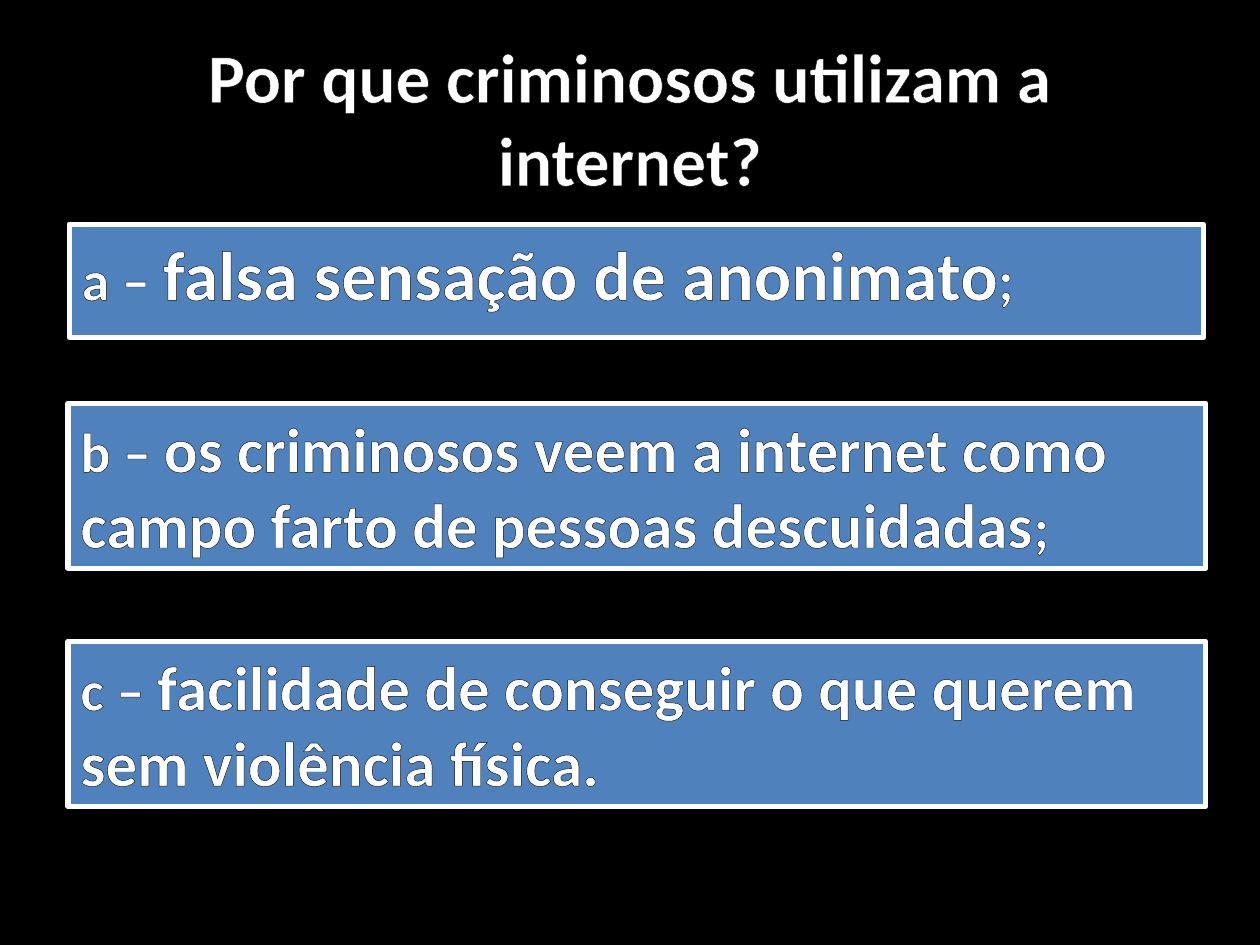
from lxml.etree import fromstring
from pptx import Presentation
from pptx.dml.color import RGBColor
from pptx.enum.shapes import MSO_SHAPE
from pptx.enum.text import MSO_ANCHOR, PP_ALIGN
from pptx.oxml.ns import nsdecls
from pptx.util import Inches, Pt

COLORS = {"back": "000000", "box": "4F81BD", "text": "FFFFFF", "edge": "0D0D0D"}
FONT = {"name": "Calibri", "bold": True}
MARK, BODY = 32, 36

BOXES = [
    ((0.55, 1.78, 9, 0.9),
     [("a – ", MARK), ("falsa sensação de anonimato", 40), (";", MARK)]),
    ((0.54, 3.2, 9.03, 1.31),
     [("b – ", MARK),
      ("os criminosos veem a internet como campo farto de pessoas descuidadas", BODY),
      (";", MARK)]),
    ((0.54, 5.09, 9.03, 1.31),
     [("c – ", MARK),
      ("facilidade de conseguir o que querem sem violência física.", BODY)]),
]


def color(name):
    return RGBColor.from_string(COLORS[name])


def paint(fill, name):
    fill.solid()
    fill.fore_color.rgb = color(name)


def edge(font):
    """Draw a thin dark outline round the letters."""
    line = fromstring(
        f'<a:ln {nsdecls("a")} w="{Pt(1.45)}"><a:solidFill>'
        f'<a:srgbClr val="{COLORS["edge"]}"/></a:solidFill></a:ln>')
    font._element.insert(0, line)


def write(shape, parts, align, anchor):
    frame = shape.text_frame
    frame.word_wrap = True
    frame.vertical_anchor = anchor
    para = frame.paragraphs[0]
    para.alignment = align
    for text, size in parts:
        run = para.add_run()
        run.text = text
        for key, value in {**FONT, "size": Pt(size)}.items():
            setattr(run.font, key, value)
        run.font.color.rgb = color("text")
        edge(run.font)


def add_title(slide, area, text):
    shape = slide.shapes.add_textbox(*map(Inches, area))
    write(shape, [(text, 39.6)], PP_ALIGN.CENTER, MSO_ANCHOR.MIDDLE)


def add_box(slide, area, parts):
    shape = slide.shapes.add_shape(MSO_SHAPE.RECTANGLE, *map(Inches, area))
    shape.shadow.inherit = False
    paint(shape.fill, "box")
    paint(shape.line.fill, "text")
    shape.line.width = Pt(3)
    write(shape, parts, PP_ALIGN.LEFT, MSO_ANCHOR.TOP)


def main():
    deck = Presentation()
    deck.slide_width, deck.slide_height = Inches(10), Inches(7.5)
    slide = deck.slides.add_slide(deck.slide_layouts[6])
    paint(slide.background.fill, "back")
    add_title(slide, (0.5, 0.3, 9, 1.25), "Por que criminosos utilizam a internet?")
    for area, parts in BOXES:
        add_box(slide, area, parts)
    deck.save("out.pptx")


if __name__ == "__main__":
    main()
